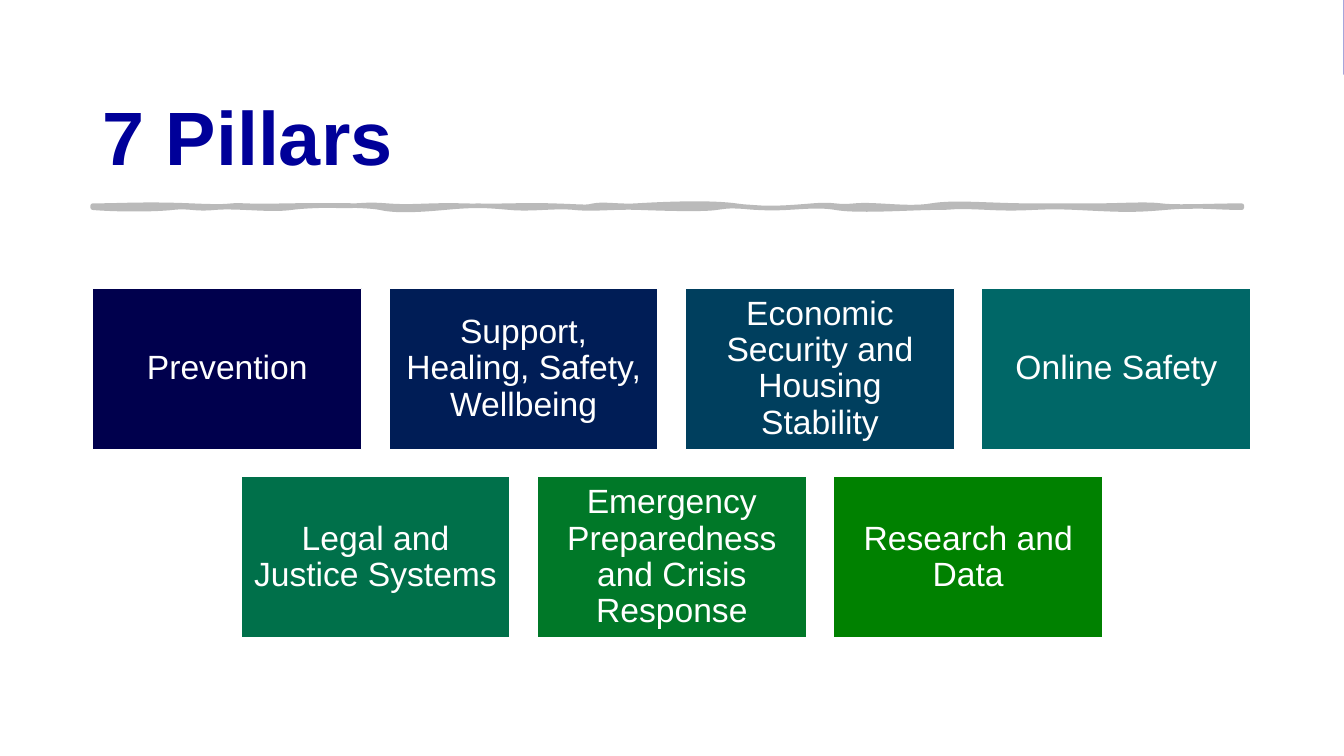
from dataclasses import dataclass

import pptx
import pptx.dml.color
import pptx.enum.shapes
import pptx.enum.text
import pptx.oxml.ns
import pptx.slide
import pptx.util
from lxml import etree

FONT = "Arial"
SLIDE_WIDTH, SLIDE_HEIGHT = 40 / 3, 7.5
LEFT = 0.92
BOX_WIDTH, BOX_HEIGHT = 2.67, 1.6
GRID_TOP = 2.86
COLUMN_STEP, ROW_STEP = 2.94, 1.87
RULE_RIGHT, RULE_TOP, RULE_BOTTOM = 12.32, 2.04, 2.06


@dataclass(frozen=True)
class Pillar:
    label: str
    fill: str
    column: float
    row: int


@dataclass(frozen=True)
class Wave:
    """One curve of the brush rule: two control points and the x where it ends."""
    x1: float
    y1: float
    x2: float
    y2: float
    end: float


PILLARS = [
    Pillar("Prevention", "00004D", 0, 0),
    Pillar("Support, Healing, Safety, Wellbeing", "001D56", 1, 0),
    Pillar("Economic Security and Housing Stability", "003F5E", 2, 0),
    Pillar("Online Safety", "006767", 3, 0),
    Pillar("Legal and Justice Systems", "00704A", 0.5, 1),
    Pillar("Emergency Preparedness and Crisis Response", "007828", 1.5, 1),
    Pillar("Research and Data", "008100", 2.5, 1),
]

TOP_WAVES = [
    Wave(1.19, 2.04, 1.44, 2.02, 1.9), Wave(2.37, 2.06, 2.2, 2.03, 2.44),
    Wave(2.67, 2.05, 3.03, 2.03, 3.31), Wave(3.6, 2.05, 3.59, 2.02, 3.84),
    Wave(4.1, 2.06, 4.23, 2.03, 4.6), Wave(4.98, 2.05, 5.14, 2.03, 5.48),
    Wave(5.81, 2.05, 5.81, 2.06, 5.89), Wave(5.98, 2.02, 6.15, 2.05, 6.31),
    Wave(6.47, 2.03, 7.01, 2, 7.3), Wave(7.59, 2.08, 7.81, 2.06, 8.06),
    Wave(8.31, 2.02, 8.27, 2.06, 8.48), Wave(8.68, 2.02, 9.01, 2.08, 9.24),
    Wave(9.47, 2, 9.82, 2.04, 10.23), Wave(10.63, 2.04, 10.63, 2.04, 10.87),
    Wave(11.12, 2.04, 11.36, 2.02, 11.52), Wave(11.68, 2.06, 12.03, 2.04, RULE_RIGHT),
]

BOTTOM_WAVES = [
    Wave(12.05, 2.06, 11.89, 2.03, 11.56), Wave(11.22, 2.09, 11.1, 2.08, 10.68),
    Wave(10.27, 2.04, 10.23, 2.08, 9.81), Wave(9.39, 2.04, 9.52, 2.06, 9.28),
    Wave(9.04, 2.06, 8.51, 2.1, 8.29), Wave(8.06, 2.02, 7.82, 2.08, 7.53),
    Wave(7.24, 2.04, 7.25, 2.04, 7.11), Wave(6.98, 2.08, 6.61, 2.07, 6.35),
    Wave(6.09, 2.05, 5.9, 2.08, 5.7), Wave(5.51, 2.04, 5.28, 2.08, 5.06),
    Wave(4.83, 2.04, 4.73, 2.03, 4.41), Wave(4.09, 2.09, 3.9, 2.09, 3.77),
    Wave(3.63, 2.03, 3.1, 2.03, 2.89), Wave(2.68, 2.09, 2.35, 2.04, 2.13),
    Wave(1.92, 2.08, 1.89, 2.04, 1.71), Wave(1.54, 2.08, 1.14, 2.08, LEFT),
]


def color(value: str) -> pptx.dml.color.RGBColor:
    return pptx.dml.color.RGBColor.from_string(value)


def style_shape(shape, fill: str, line: str = "", line_width: float = 0) -> None:
    shape.shadow.inherit = False
    shape.fill.solid()
    shape.fill.fore_color.rgb = color(fill)
    if line:
        shape.line.color.rgb = color(line)
        shape.line.width = pptx.util.Pt(line_width)
    else:
        shape.line.fill.background()


def add_rectangle(slide: pptx.slide.Slide, left: float, top: float,
                  width: float, height: float):
    return slide.shapes.add_shape(
        pptx.enum.shapes.MSO_SHAPE.RECTANGLE,
        pptx.util.Inches(left), pptx.util.Inches(top),
        pptx.util.Inches(width), pptx.util.Inches(height))


def set_text(shape, text: str, size: float, text_color: str, bold: bool,
             anchor: pptx.enum.text.MSO_ANCHOR,
             alignment: pptx.enum.text.PP_ALIGN) -> None:
    frame = shape.text_frame
    frame.text = text
    frame.word_wrap = True
    frame.auto_size = pptx.enum.text.MSO_AUTO_SIZE.NONE
    frame.vertical_anchor = anchor
    paragraph = frame.paragraphs[0]
    paragraph.alignment = alignment
    paragraph.line_spacing = 0.9
    font = paragraph.runs[0].font
    font.name = FONT
    font.size = pptx.util.Pt(size)
    font.bold = bold
    font.color.rgb = color(text_color)


def add_backdrop(slide: pptx.slide.Slide) -> None:
    """Blue top band that shows only at the right edge of the white panel."""
    style_shape(add_rectangle(slide, 0, 0, SLIDE_WIDTH, 0.74), "000099")
    style_shape(add_rectangle(slide, 0, 0, 13.33, SLIDE_HEIGHT), "FFFFFF")


def add_title(slide: pptx.slide.Slide, text: str) -> None:
    title = slide.shapes.title
    title.left, title.top = pptx.util.Inches(LEFT), pptx.util.Inches(0.4)
    title.width, title.height = pptx.util.Inches(11.5), pptx.util.Inches(1.45)
    set_text(title, text, 54, "000099", True,
             pptx.enum.text.MSO_ANCHOR.BOTTOM, pptx.enum.text.PP_ALIGN.LEFT)


def bend_segment(segment, wave: Wave) -> None:
    """Turn a straight freeform segment into a cubic curve."""
    segment.tag = pptx.oxml.ns.qn("a:cubicBezTo")
    controls = [(wave.x1, wave.y1), (wave.x2, wave.y2)]
    for index, (x, y) in enumerate(controls):
        point = etree.Element(pptx.oxml.ns.qn("a:pt"))
        point.set("x", str(pptx.util.Inches(x) - pptx.util.Inches(LEFT)))
        point.set("y", str(pptx.util.Inches(y) - pptx.util.Inches(RULE_TOP)))
        segment.insert(index, point)


def add_brush_rule(slide: pptx.slide.Slide) -> None:
    corners = ([(wave.end, RULE_TOP) for wave in TOP_WAVES]
               + [(RULE_RIGHT, RULE_BOTTOM)]
               + [(wave.end, RULE_BOTTOM) for wave in BOTTOM_WAVES])
    builder = slide.shapes.build_freeform(pptx.util.Inches(LEFT), pptx.util.Inches(RULE_TOP))
    builder.add_line_segments(
        [(pptx.util.Inches(x), pptx.util.Inches(y)) for x, y in corners], close=True)
    rule = builder.convert_to_shape()
    segments = list(rule.element.iter(pptx.oxml.ns.qn("a:lnTo")))
    top_count = len(TOP_WAVES)
    for segment, wave in zip(segments[:top_count], TOP_WAVES):
        bend_segment(segment, wave)
    for segment, wave in zip(segments[top_count + 1:], BOTTOM_WAVES):
        bend_segment(segment, wave)
    style_shape(rule, "BABABA", "BABABA", 3.25)


def add_pillar(slide: pptx.slide.Slide, pillar: Pillar) -> None:
    box = add_rectangle(slide, LEFT + pillar.column * COLUMN_STEP,
                        GRID_TOP + pillar.row * ROW_STEP, BOX_WIDTH, BOX_HEIGHT)
    style_shape(box, pillar.fill, "FFFFFF", 1)
    frame = box.text_frame
    frame.margin_left = frame.margin_right = pptx.util.Inches(0.1)
    frame.margin_top = frame.margin_bottom = pptx.util.Inches(0.1)
    set_text(box, pillar.label, 24, "FFFFFF", False,
             pptx.enum.text.MSO_ANCHOR.MIDDLE, pptx.enum.text.PP_ALIGN.CENTER)


def main() -> None:
    presentation = pptx.Presentation()
    presentation.slide_width = pptx.util.Inches(SLIDE_WIDTH)
    presentation.slide_height = pptx.util.Inches(SLIDE_HEIGHT)
    slide = presentation.slides.add_slide(presentation.slide_layouts.get_by_name("Title Only"))

    # Backdrop, heading and brush rule
    add_backdrop(slide)
    title_element = slide.shapes.title.element
    title_element.getparent().append(title_element)
    add_title(slide, "7 Pillars")
    add_brush_rule(slide)

    # Pillar grid, second row centred under the first
    for pillar in PILLARS:
        add_pillar(slide, pillar)

    presentation.save("out.pptx")


if __name__ == "__main__":
    main()
